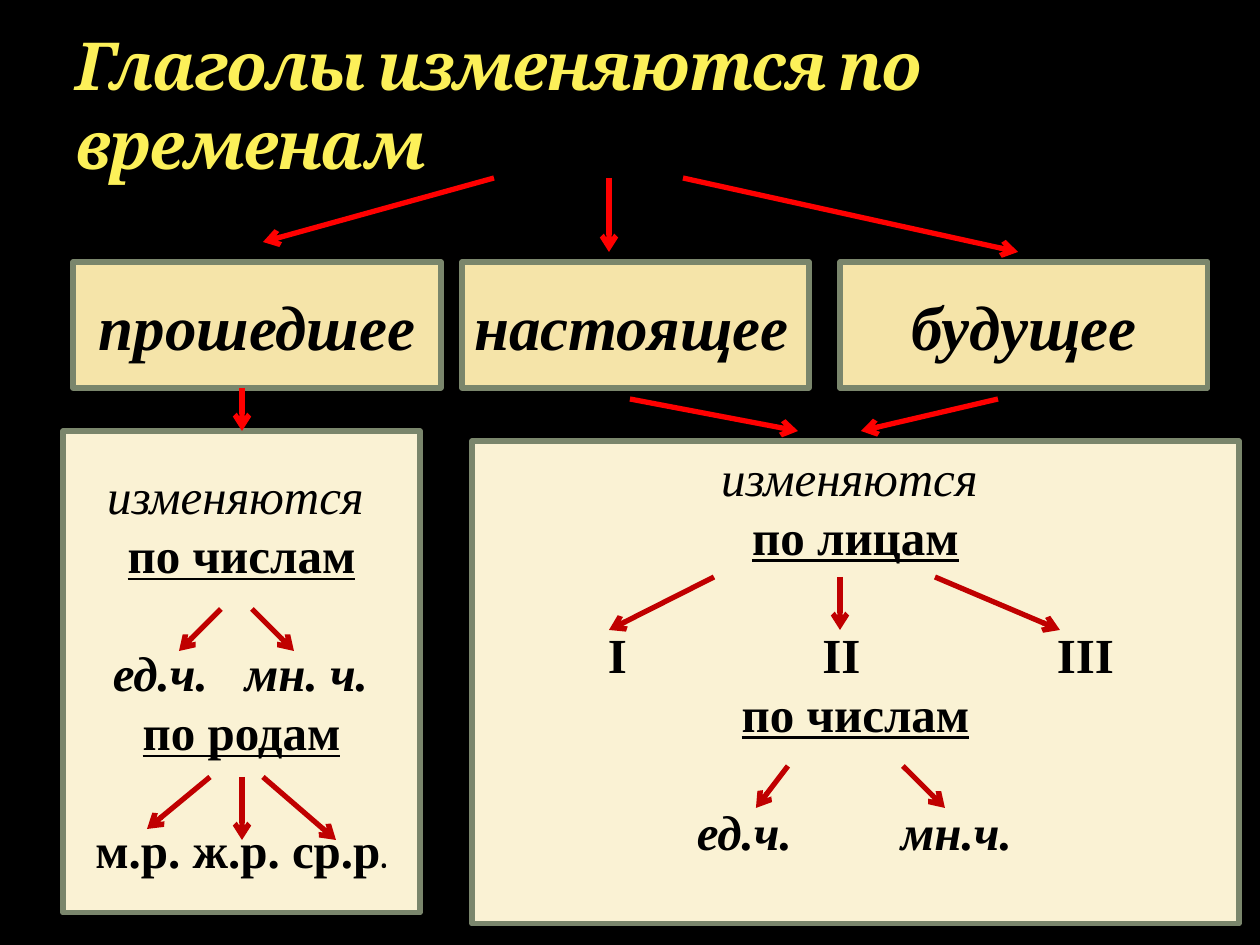
import pptx
import pptx.util
import pptx.dml.color
import pptx.enum.shapes
import pptx.enum.text
import pptx.oxml
import pptx.oxml.ns
from dataclasses import dataclass

ALIGN = pptx.enum.text.PP_ALIGN
ANCHOR = pptx.enum.text.MSO_ANCHOR
SHAPES = pptx.enum.shapes


@dataclass(frozen=True)
class Theme:
    background: str = "000000"
    title: str = "FCF059"
    ink: str = "000000"
    tense_fill: str = "F5E4A9"
    panel_fill: str = "FAF2D4"
    border: str = "7A866C"
    main_arrow: str = "FF0000"
    panel_arrow: str = "C00000"
    title_font: str = "Cambria"
    body_font: str = "Times New Roman"
    title_size: float = 37.8
    tense_size: int = 36
    panel_size: int = 28
    dot_size: int = 18
    row_pitch: float = 33.7
    stroke: int = 3


THEME = Theme()
EMU_PER_PX = 914400 // 126
INSET = 13

TITLE = ("Глаголы изменяются по временам", (63, 21, 1134, 168))

TENSES = [
    ("прошедшее", (73, 262, 368, 126), ALIGN.CENTER),
    ("настоящее", (462, 262, 347, 126), ALIGN.LEFT),
    ("будущее", (840, 262, 368, 126), ALIGN.CENTER),
]

INTRO, HEADING, NUMBERS, FORMS = "i", "bu", "bi", "b"

PANELS = [
    ((63, 431, 357, 482), ANCHOR.MIDDLE, [
        (["изменяются "], INTRO, 0, []),
        (["по числам"], HEADING, 0, []),
        (["\tед.ч.\tмн. ч."], NUMBERS, 1, [161, 307]),
        (["по родам"], HEADING, 0, []),
        (["м.р. ж.р. ср.р", "."], FORMS, 1, []),
    ]),
    ((472, 441, 767, 483), ANCHOR.TOP, [
        (["изменяются "], INTRO, 0, []),
        (["по лицам"], HEADING, 0, []),
        (["\tI\tII\tIII"], FORMS, 1, [618, 842, 1086]),
        (["по числам"], HEADING, 0, []),
        (["\tед.ч.\tмн.ч."], NUMBERS, 1, [745, 957]),
    ]),
]

ARROWS = {
    THEME.main_arrow: [
        (683, 178, 1018, 252), (609, 178, 609, 252), (494, 178, 263, 242),
        (242, 388, 242, 431), (630, 399, 798, 431), (998, 399, 861, 431),
    ],
    THEME.panel_arrow: [
        (252, 609, 294, 651), (221, 609, 179, 651),
        (263, 777, 336, 840), (242, 777, 242, 840), (210, 777, 147, 829),
        (714, 577, 609, 630), (840, 577, 840, 630), (935, 577, 1060, 630),
        (903, 766, 945, 808), (788, 766, 756, 808),
    ],
}


def px(*lengths):
    return [pptx.util.Emu(length * EMU_PER_PX) for length in lengths]


def rgb(code):
    return pptx.dml.color.RGBColor.from_string(code)


def style(run, size, colour, font, marks):
    run.font.size = pptx.util.Pt(size)
    run.font.name = font
    run.font.color.rgb = rgb(colour)
    run.font.bold = "b" in marks
    run.font.italic = "i" in marks
    run.font.underline = "u" in marks


def add_box(slide, area, fill, anchor):
    box = slide.shapes.add_shape(SHAPES.MSO_SHAPE.RECTANGLE, *px(*area))
    box.shadow.inherit = False
    box.fill.solid()
    box.fill.fore_color.rgb = rgb(fill)
    box.line.color.rgb = rgb(THEME.border)
    box.line.width = pptx.util.Pt(THEME.stroke)
    box.text_frame.word_wrap = True
    box.text_frame.vertical_anchor = anchor
    return box.text_frame


def add_title(slide, text, area):
    frame = slide.shapes.add_textbox(*px(*area)).text_frame
    frame.word_wrap = True
    frame.vertical_anchor = ANCHOR.BOTTOM
    frame.text = text
    heading = frame.paragraphs[0].runs[0]
    style(heading, THEME.title_size, THEME.title, THEME.title_font, "bi")
    heading.font._element.set("spc", "-100")


def add_tense(slide, text, area, align):
    frame = add_box(slide, area, THEME.tense_fill, ANCHOR.MIDDLE)
    frame.text = text
    paragraph = frame.paragraphs[0]
    paragraph.alignment = align
    style(paragraph.runs[0], THEME.tense_size, THEME.ink, THEME.body_font, "bi")


def set_tabs(paragraph, offsets):
    properties = paragraph._p.get_or_add_pPr()
    tabs = pptx.oxml.parse_xml(
        f'<a:tabLst {pptx.oxml.ns.nsdecls("a")}>'
        + "".join(f'<a:tab pos="{pos}" algn="ctr"/>' for pos in px(*offsets))
        + "</a:tabLst>")
    properties.append(tabs)


def add_panel(slide, area, anchor, rows):
    frame = add_box(slide, area, THEME.panel_fill, anchor)
    frame.text = "\n".join(parts[0] for parts, *_ in rows)
    for paragraph, (parts, marks, gap, stops) in zip(frame.paragraphs, rows):
        paragraph.alignment = ALIGN.LEFT if stops else ALIGN.CENTER
        paragraph.line_spacing = pptx.util.Pt(THEME.row_pitch)
        paragraph.space_before = pptx.util.Pt(gap * THEME.row_pitch)
        if stops:
            set_tabs(paragraph, [stop - area[0] - INSET for stop in stops])
        for run in paragraph.runs:
            style(run, THEME.panel_size, THEME.ink, THEME.body_font, marks)
        for ending in parts[1:]:
            dot = paragraph.add_run()
            dot.text = ending
            style(dot, THEME.dot_size, THEME.ink, THEME.title_font, marks)


def add_arrow(slide, ends, colour):
    arrow = slide.shapes.add_connector(SHAPES.MSO_CONNECTOR.STRAIGHT, *px(*ends))
    arrow.line.color.rgb = rgb(colour)
    arrow.line.width = pptx.util.Pt(THEME.stroke)
    namespace = pptx.oxml.ns.nsdecls("a")
    arrow.line._get_or_add_ln().append(
        pptx.oxml.parse_xml(f'<a:tailEnd {namespace} type="arrow"/>'))
    arrow._element.spPr.append(pptx.oxml.parse_xml(f"<a:effectLst {namespace}/>"))


def main():
    deck = pptx.Presentation()
    deck.slide_width, deck.slide_height = px(1260, 945)
    slide = deck.slides.add_slide(deck.slide_layouts[6])
    slide.background.fill.solid()
    slide.background.fill.fore_color.rgb = rgb(THEME.background)
    add_title(slide, *TITLE)
    for tense in TENSES:
        add_tense(slide, *tense)
    for panel in PANELS:
        add_panel(slide, *panel)
    for colour, arrows in ARROWS.items():
        for ends in arrows:
            add_arrow(slide, ends, colour)
    deck.save("out.pptx")


if __name__ == "__main__":
    main()
